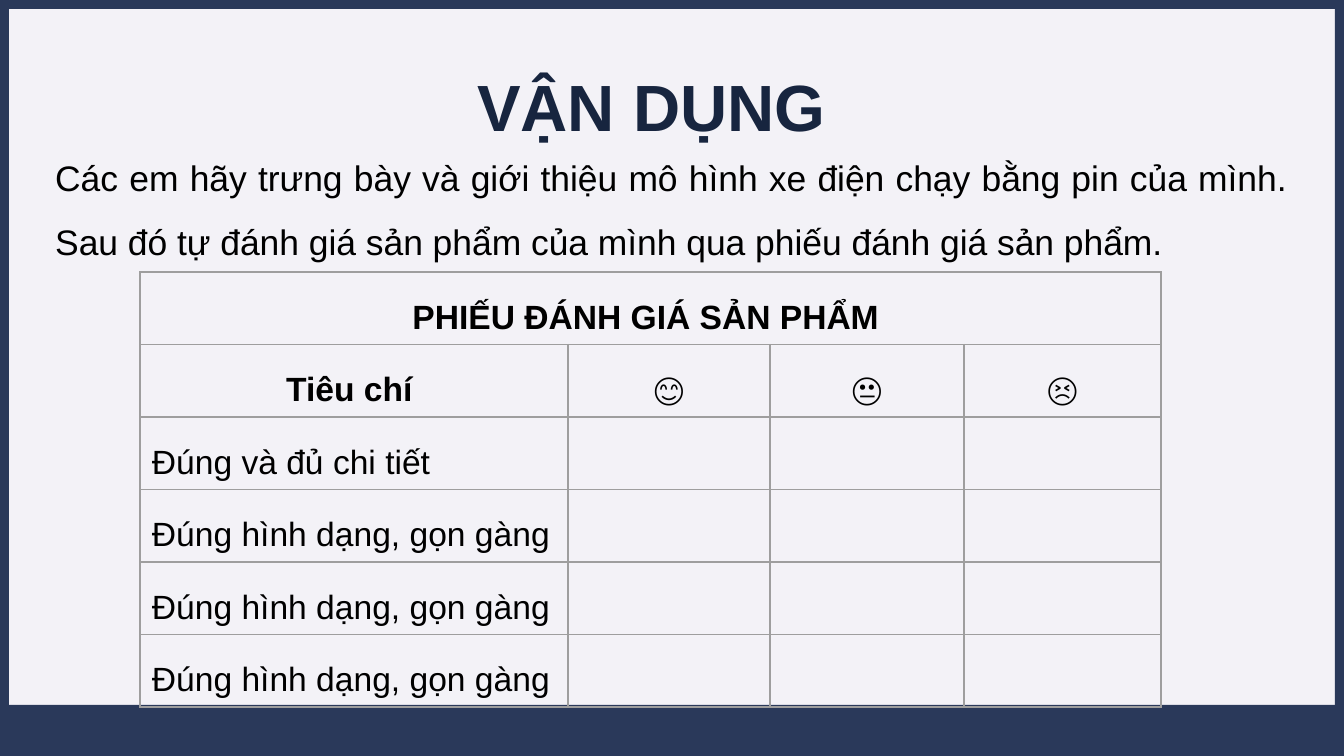
import pptx
import pptx.util
import pptx.dml.color
import pptx.enum.shapes
import pptx.enum.text
import pptx.oxml

PX = 914400 / 134.4
COLORS = {"paper": "F3F2F7", "navy": "2A395A", "title": "17253F", "text": "000000", "grid": "9E9E9E"}
NS = "http://schemas.openxmlformats.org/drawingml/2006/main"
ALIGN = pptx.enum.text.PP_ALIGN
ANCHOR = pptx.enum.text.MSO_ANCHOR
SHAPE = pptx.enum.shapes.MSO_SHAPE


def px(*values):
    return [pptx.util.Emu(round(v * PX)) for v in values]


def write(tf, text, size, color, align, bold=False):
    p = tf.paragraphs[0]
    p.text = text
    p.alignment = align
    p.line_spacing = 1.5
    p.font.name = "Arial"
    p.font.size = pptx.util.Pt(size)
    p.font.bold = bold
    p.font.color.rgb = pptx.dml.color.RGBColor.from_string(COLORS[color])
    return p


prs = pptx.Presentation()
prs.slide_width, prs.slide_height = px(1344, 756)
s = prs.slides.add_slide(prs.slide_layouts[6])
s.background.fill.solid()
s.background.fill.fore_color.rgb = pptx.dml.color.RGBColor.from_string(COLORS["paper"])

frame = s.shapes.add_shape(SHAPE.FRAME, *px(0, 0, 1344, 756))
frame.adjustments[0] = 0.012
footer = s.shapes.add_shape(SHAPE.RECTANGLE, *px(0, 705, 1344, 51))
for sp in (frame, footer):
    sp.shadow.inherit = False
    sp.fill.solid()
    sp.fill.fore_color.rgb = pptx.dml.color.RGBColor.from_string(COLORS["navy"])
    sp.line.fill.background()

title = s.shapes.add_textbox(*px(85, 12, 1133, 146))
tf = title.text_frame
tf.word_wrap = True
tf.vertical_anchor = ANCHOR.BOTTOM
tf.margin_left, tf.margin_top, tf.margin_right, tf.margin_bottom = px(13, 13, 13, 13)
write(tf, "VẬN DỤNG", 35, "title", ALIGN.CENTER, True)

rows = [
    ["PHIẾU ĐÁNH GIÁ SẢN PHẨM ", "", "", ""],
    ["Tiêu chí ", "😊", "😐", "😣"],
    ["Đúng và đủ chi tiết", "", "", ""],
] + [["Đúng hình dạng, gọn gàng", "", "", ""]] * 3
widths = [428, 202, 194, 197]
row_height = 70
shape = s.shapes.add_table(
    len(rows), len(widths), *px(140, 272, sum(widths), row_height * len(rows))
)
table = shape.table
table.first_row = False
table.horz_banding = False
for column, width in zip(table.columns, widths):
    column.width = px(width)[0]
for i, row in enumerate(rows):
    table.rows[i].height = px(row_height)[0]
    for j, text in enumerate(row):
        cell = table.cell(i, j)
        cell.vertical_anchor = ANCHOR.MIDDLE
        cell.margin_left, cell.margin_top, cell.margin_right, cell.margin_bottom = px(12, 6, 12, 6)
        cell.fill.background()
        align = ALIGN.CENTER if i < 2 else ALIGN.LEFT
        write(cell.text_frame, text, 18, "text", align, i < 2 and j == 0)
        for k, side in enumerate(("lnL", "lnR", "lnT", "lnB")):
            border = pptx.oxml.parse_xml(
                f'<a:{side} xmlns:a="{NS}" w="9525"><a:solidFill>'
                f'<a:srgbClr val="{COLORS["grid"]}"/></a:solidFill></a:{side}>'
            )
            cell._tc.get_or_add_tcPr().insert(k, border)
table.cell(0, 0).merge(table.cell(0, 3))

task = s.shapes.add_textbox(*px(42, 128, 1259, 134))
tf = task.text_frame
tf.word_wrap = True
p = write(
    tf,
    "Các em hãy trưng bày và giới thiệu mô hình xe điện chạy bằng pin của mình. "
    "Sau đó tự đánh giá sản phẩm của mình qua phiếu đánh giá sản phẩm.",
    19, "text", ALIGN.JUSTIFY,
)
p.space_after = pptx.util.Pt(10)

prs.save("out.pptx")
